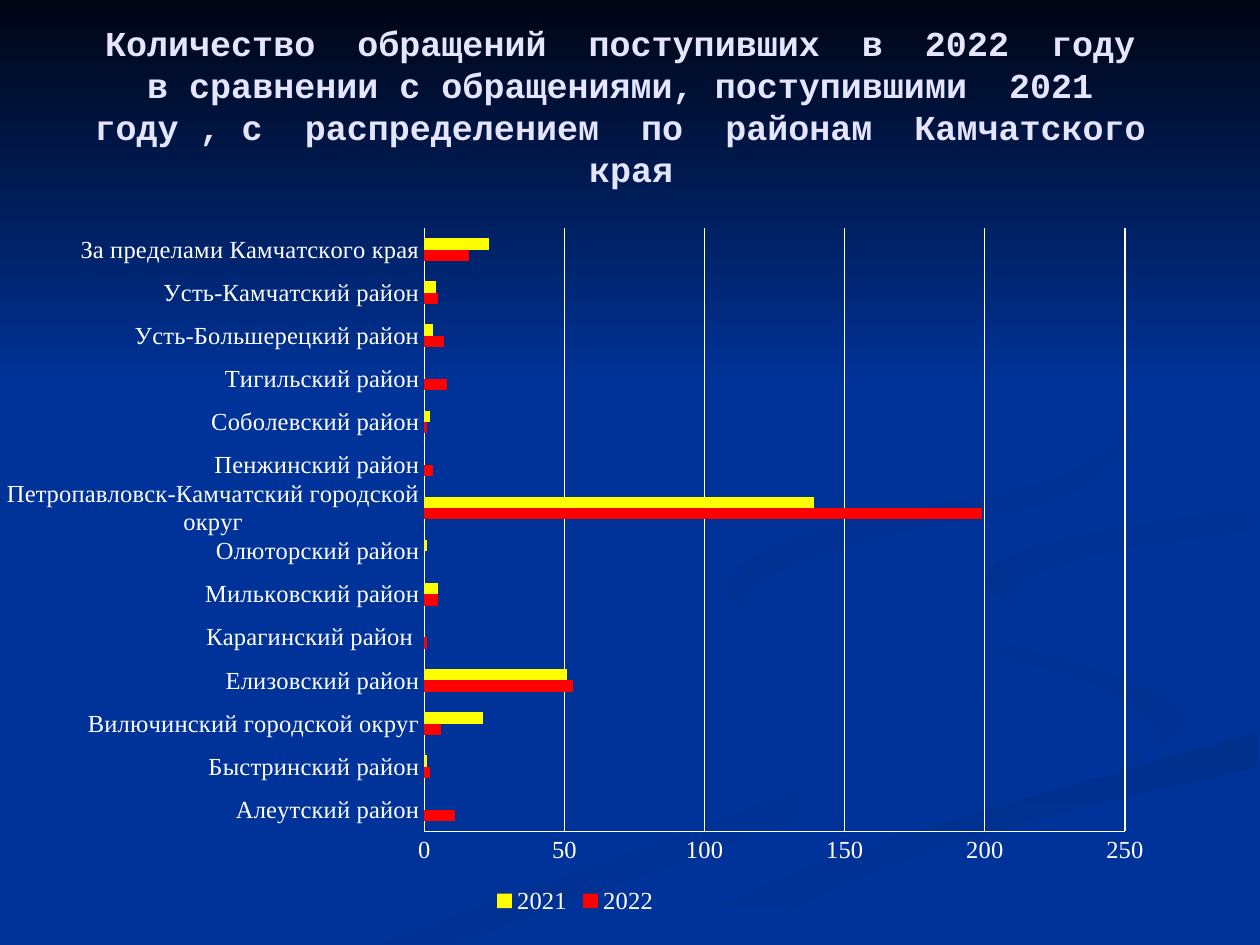
from lxml import etree
from pptx import Presentation
from pptx.chart.data import CategoryChartData
from pptx.dml.color import RGBColor
from pptx.enum.chart import XL_CHART_TYPE, XL_LEGEND_POSITION, XL_TICK_MARK
from pptx.enum.shapes import MSO_SHAPE
from pptx.enum.text import MSO_ANCHOR, MSO_AUTO_SIZE, PP_ALIGN
from pptx.oxml.ns import qn
from pptx.util import Inches, Pt

COLORS = {"background": "003399", "night": "000514", "title": "E5E5FF", "text": "FFFFFF",
          "2022": "FF0000", "2021": "FFFF00", "wave": "003193", "sweep": "002F8C",
          "edge": "003091", "curl": "002F8E"}

TITLE = ("Количество  обращений  поступивших  в  2022  году \v"
         "в сравнении с обращениями, поступившими  2021  году , "
         "с  распределением  по  районам  Камчатского  края")

# District, appeals in 2022, appeals in 2021 (bottom to top)
YEARS = ("2022", "2021")
DISTRICTS = [
    ("Алеутский район", 11, None),
    ("Быстринский район", 2, 1),
    ("Вилючинский городской округ", 6, 21),
    ("Елизовский район", 53, 51),
    ("Карагинский район ", 1, None),
    ("Мильковский район", 5, 5),
    ("Олюторский район", None, 1),
    ("Петропавловск-Камчатский городской округ", 199, 139),
    ("Пенжинский район", 3, None),
    ("Соболевский район", 1, 2),
    ("Тигильский район", 8, None),
    ("Усть-Большерецкий район", 7, 3),
    ("Усть-Камчатский район", 5, 4),
    ("За пределами Камчатского края", 16, 23),
]
PLOT = {"x": 0.369, "y": 0.06, "w": 0.609, "h": 0.82}

# Backdrop ribbons: start colour, end colour, clockwise angle, two edges in inches
RIBBONS = [
    ("wave", "background", 0,
     [(5.75, 4.6), (6.14, 4.96), (7.31, 5.33), (8, 5.81), (6.76, 6.34), (3.61, 7.49)],
     [(5.72, 4.7), (6.31, 5.05), (7.41, 5.39), (7.86, 5.66), (6.52, 6.2), (3, 7.49)]),
    ("background", "wave", 45,
     [(7.24, 4.64), (7.58, 4.98), (8.7, 5.3), (9.43, 5.7), (8.94, 6.05)],
     [(7.24, 4.7), (7.66, 5.12), (8.68, 5.44), (9.18, 5.81), (8.94, 6.05)]),
    ("sweep", "background", 90,
     [(5.03, 7.49), (6.62, 6.81), (8.31, 6.29), (9.98, 5.81)],
     [(5.71, 7.49), (6.95, 6.92), (8.21, 6.51), (9.98, 6.09)]),
    ("edge", "background", 45,
     [(8.26, 4.96), (7.81, 4.6), (8.35, 4.3), (9.98, 4.02)],
     [(8.26, 4.96), (8.05, 4.72), (8.59, 4.43), (9.98, 4.2)]),
    ("curl", "background", 45,
     [(7.62, 2.33), (8.64, 2.91), (8.94, 3.44), (8.41, 3.96), (6.83, 4.3), (5.94, 4.7), (6.22, 5)],
     [(7.62, 2.33), (8.55, 2.85), (8.89, 3.35), (8.3, 3.82), (6.49, 4.2), (5.77, 4.62), (6.22, 5)]),
]
CURVE_STEPS = 8


def rgb(name):
    return RGBColor.from_string(COLORS[name])


def set_format(target, values):
    for name, value in values.items():
        setattr(target, name, value)


def smooth_edge(anchors):
    """Catmull-Rom curve through the anchors, in hundredths of an inch."""
    padded = [anchors[0], *anchors, anchors[-1]]
    points = []
    for a, b, c, d in zip(padded, padded[1:], padded[2:], padded[3:]):
        for step in range(CURVE_STEPS):
            t = step / CURVE_STEPS
            points.append(tuple(
                round(50 * (2 * q + (r - p) * t + (2 * p - 5 * q + 4 * r - s) * t ** 2
                            + (3 * q - p - 3 * r + s) * t ** 3))
                for p, q, r, s in zip(a, b, c, d)))
    return points + [tuple(round(100 * value) for value in anchors[-1])]


def fill_gradient(shape, start, end, angle):
    shape.shadow.inherit = False
    shape.line.fill.background()
    shape.fill.gradient()
    shape.fill.gradient_angle = (360 - angle) % 360
    for stop, color in zip(shape.fill.gradient_stops, (start, end)):
        stop.color.rgb = rgb(color)


def add_backdrop(slide):
    for start, end, angle, outer, inner in RIBBONS:
        points = smooth_edge(outer) + smooth_edge(inner)[::-1]
        builder = slide.shapes.build_freeform(*points[0], scale=Inches(0.01))
        builder.add_line_segments(points[1:], close=True)
        fill_gradient(builder.convert_to_shape(), start, end, angle)
    sky = slide.shapes.add_shape(MSO_SHAPE.RECTANGLE, 0, 0, Inches(10), Inches(3.08))
    fill_gradient(sky, "night", "background", 90)


def format_title(title):
    set_format(title, {"left": Inches(0.51), "top": Inches(0.21),
                       "width": Inches(9), "height": Inches(1.25)})
    title.text_frame.text = TITLE
    set_format(title.text_frame, {"word_wrap": True, "auto_size": MSO_AUTO_SIZE.NONE,
                                  "vertical_anchor": MSO_ANCHOR.MIDDLE})
    paragraph = title.text_frame.paragraphs[0]
    paragraph.alignment = PP_ALIGN.CENTER
    for run in paragraph.runs:
        set_format(run.font, {"name": "Courier New", "size": Pt(20), "bold": True})
        run.font.color.rgb = rgb("title")


def format_line(line):
    line.color.rgb = rgb("text")
    line.width = Pt(0.75)


def set_plot_layout(chart):
    plot_area = chart.element.find(".//" + qn("c:plotArea"))
    for old in plot_area.findall(qn("c:layout")):
        plot_area.remove(old)
    layout = etree.Element(qn("c:layout"))
    manual = etree.SubElement(layout, qn("c:manualLayout"))
    settings = {"layoutTarget": "inner", "xMode": "edge", "yMode": "edge", **PLOT}
    for name, value in settings.items():
        etree.SubElement(manual, qn("c:" + name)).set("val", str(value))
    plot_area.insert(0, layout)


def add_district_chart(slide):
    data = CategoryChartData()
    names, *columns = zip(*DISTRICTS)
    data.categories = names
    for year, values in zip(YEARS, columns):
        data.add_series(year, values)
    chart = slide.shapes.add_chart(XL_CHART_TYPE.BAR_CLUSTERED, Inches(0), Inches(1.46),
                                   Inches(9.13), Inches(5.84), data).chart
    set_format(chart, {"has_title": False, "has_legend": True})
    set_format(chart.legend, {"position": XL_LEGEND_POSITION.BOTTOM, "include_in_layout": False})
    set_format(chart.plots[0], {"gap_width": 182, "vary_by_categories": False})
    for series in chart.plots[0].series:
        series.format.fill.solid()
        series.format.fill.fore_color.rgb = rgb(series.name)

    # Axes, grid and fonts
    axes = (chart.category_axis, chart.value_axis)
    for axis in axes:
        set_format(axis, {"major_tick_mark": XL_TICK_MARK.NONE,
                          "minor_tick_mark": XL_TICK_MARK.NONE})
        format_line(axis.format.line)
    set_format(chart.value_axis, {"minimum_scale": 0, "maximum_scale": 250, "major_unit": 50,
                                  "has_major_gridlines": True})
    format_line(chart.value_axis.major_gridlines.format.line)
    for font in (chart.font, chart.legend.font, *(axis.tick_labels.font for axis in axes)):
        set_format(font, {"name": "Times New Roman", "size": Pt(14), "bold": False})
        font.color.rgb = rgb("text")
    set_plot_layout(chart)


def main():
    presentation = Presentation()
    set_format(presentation, {"slide_width": Inches(10), "slide_height": Inches(7.5)})
    slide = presentation.slides.add_slide(presentation.slide_layouts[5])
    slide.background.fill.solid()
    slide.background.fill.fore_color.rgb = rgb("background")
    add_backdrop(slide)

    # Title goes in front of the backdrop
    title = slide.shapes.title
    title.element.getparent().append(title.element)
    format_title(title)
    add_district_chart(slide)
    presentation.save("out.pptx")


if __name__ == "__main__":
    main()
